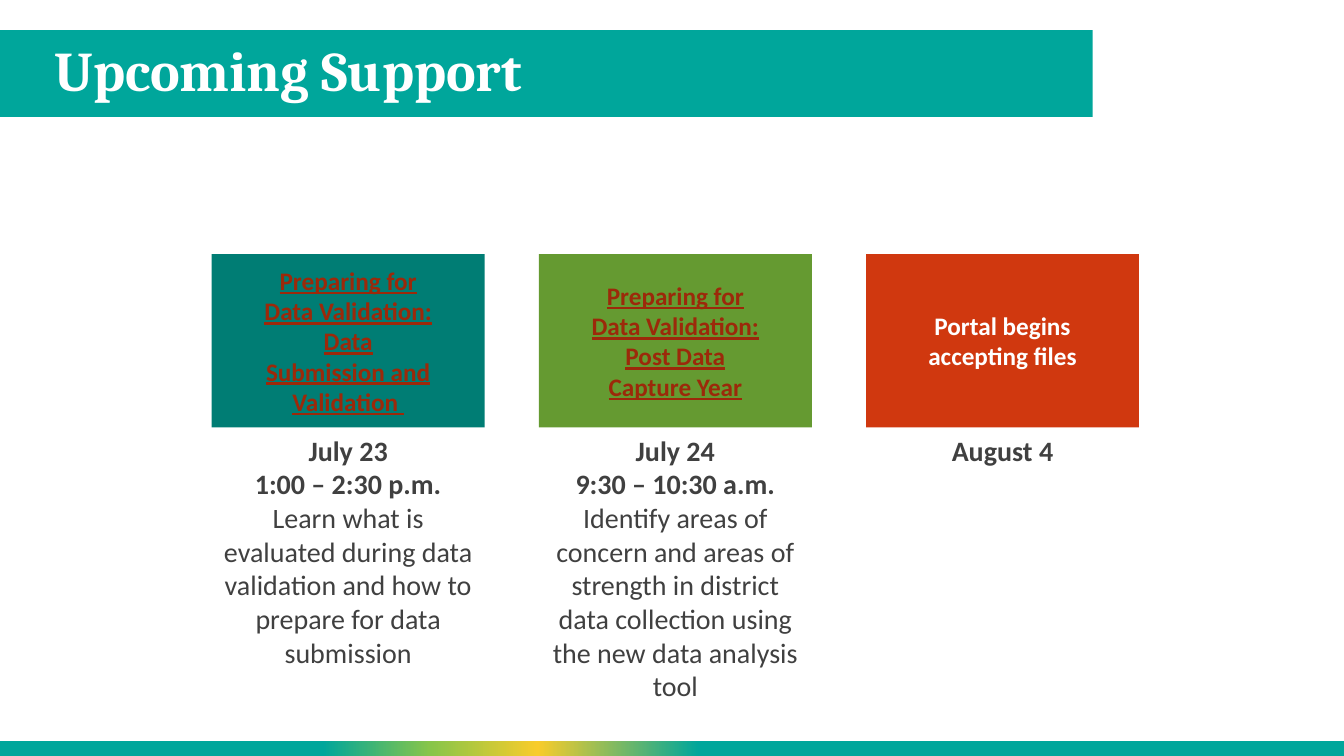
"""Build the Upcoming Support slide with three event columns."""
from dataclasses import dataclass

from lxml import etree
from pptx import Presentation
from pptx import util as u
from pptx.dml.color import RGBColor
from pptx.enum import shapes, text
from pptx.oxml.ns import qn
from pptx.shapes.autoshape import Shape
from pptx.slide import Slide

COLORS = {
    "teal": "00A69B",
    "yellow": "F8CC2B",
    "lime": "87C54A",
    "dark_teal": "007D74",
    "green": "659A31",
    "red": "D0380F",
    "link": "9C290A",
    "body": "404040",
    "white": "FFFFFF",
}
FOOTER_STOPS = [(0, "teal"), (48, "teal"), (60, "yellow"),
                (68, "lime"), (76, "teal"), (100, "teal")]
FIRST_LEFT, COLUMN_PITCH, COLUMN_WIDTH = 151.2, 233.7, 195
CARD_TOP, CARD_HEIGHT, CARD_INSET = 181.5, 123.8, 36
DETAIL_TOP, DETAIL_HEIGHT = 306, 131.8


@dataclass(frozen=True)
class Event:
    """One column: a coloured card with its schedule and description."""
    heading: str
    fill: str
    schedule: tuple[str, ...]
    description: str = ""
    linked: bool = True


EVENTS = [
    Event("Preparing for Data Validation: Data Submission and Validation ",
          "dark_teal", ("July 23", "1:00 – 2:30 p.m."),
          "Learn what is evaluated during data validation and how to "
          "prepare for data submission"),
    Event("Preparing for Data Validation: Post Data Capture Year",
          "green", ("July 24", "9:30 – 10:30 a.m."),
          "Identify areas of concern and areas of strength in district "
          "data collection using the new data analysis tool"),
    Event("Portal begins accepting files", "red", ("August 4",), linked=False),
]


def rgb(name: str) -> RGBColor:
    """Return the named colour."""
    return RGBColor.from_string(COLORS[name])


def add_rectangle(slide: Slide, left: float, top: float, width: float,
                  height: float, fill: str) -> Shape:
    """Add a flat rectangle without outline or shadow."""
    shape = slide.shapes.add_shape(
        shapes.MSO_SHAPE.RECTANGLE,
        u.Pt(left), u.Pt(top), u.Pt(width), u.Pt(height))
    shape.shadow.inherit = False
    shape.line.fill.background()
    shape.fill.solid()
    shape.fill.fore_color.rgb = rgb(fill)
    return shape


def style_paragraph(paragraph, size: float, color: str, bold: bool = True,
                    name: str = "Calibri",
                    alignment=text.PP_ALIGN.CENTER) -> None:
    """Set the alignment and font of a paragraph."""
    paragraph.alignment = alignment
    font = paragraph.font
    font.name, font.size, font.bold = name, u.Pt(size), bold
    font.color.rgb = rgb(color)


def add_footer(slide: Slide) -> None:
    """Add the gradient strip along the bottom edge."""
    footer = add_rectangle(slide, 0, 529.2, 960, 10.8, "teal")
    footer.fill.gradient()
    footer.fill.gradient_angle = 180
    stop_list = next(footer.element.iter(qn("a:gsLst")))
    for stop in list(stop_list):
        stop_list.remove(stop)
    for percent, color in FOOTER_STOPS:
        stop = etree.SubElement(stop_list, qn("a:gs"), pos=str(percent * 1000))
        etree.SubElement(stop, qn("a:srgbClr"), val=COLORS[color])


def format_title(slide: Slide) -> None:
    """Place the title in front of its banner and format it."""
    title = slide.shapes.title
    slide.shapes.element.append(title.element)
    title.left, title.top = u.Pt(31.7), u.Pt(21.6)
    title.width, title.height = u.Pt(749.5), u.Pt(61.9)
    frame = title.text_frame
    frame.text = "Upcoming Support"
    frame.auto_size = text.MSO_AUTO_SIZE.NONE
    frame.vertical_anchor = text.MSO_ANCHOR.MIDDLE
    paragraph = frame.paragraphs[0]
    paragraph.line_spacing = 0.9
    style_paragraph(paragraph, 40, "white", name="Cambria",
                    alignment=text.PP_ALIGN.LEFT)


def add_card(slide: Slide, event: Event, left: float) -> None:
    """Add the coloured heading card of an event."""
    card = add_rectangle(slide, left, CARD_TOP, COLUMN_WIDTH, CARD_HEIGHT,
                         event.fill)
    frame = card.text_frame
    frame.word_wrap = True
    frame.vertical_anchor = text.MSO_ANCHOR.MIDDLE
    frame.margin_left = frame.margin_right = u.Pt(CARD_INSET)
    frame.margin_top = frame.margin_bottom = u.Pt(CARD_INSET)
    frame.text = event.heading
    paragraph = frame.paragraphs[0]
    style_paragraph(paragraph, 18, "link" if event.linked else "white")
    paragraph.font.underline = event.linked
    paragraph.runs[0].font.underline = event.linked


def add_details(slide: Slide, event: Event, left: float) -> None:
    """Add the schedule and description under a card."""
    box = slide.shapes.add_textbox(u.Pt(left), u.Pt(DETAIL_TOP),
                                   u.Pt(COLUMN_WIDTH), u.Pt(DETAIL_HEIGHT))
    frame = box.text_frame
    frame.word_wrap = True
    lines = [(line, True) for line in event.schedule]
    if event.description:
        lines.append((event.description, False))
    frame.text = "\n".join(line for line, _ in lines)
    for paragraph, (_, bold) in zip(frame.paragraphs, lines):
        style_paragraph(paragraph, 20, "body", bold)


def main() -> None:
    """Build and save the presentation."""
    presentation = Presentation()
    presentation.slide_width, presentation.slide_height = u.Pt(960), u.Pt(540)
    slide = presentation.slides.add_slide(presentation.slide_layouts[5])
    add_rectangle(slide, 0, 21.6, 780.5, 61.9, "teal")
    add_footer(slide)
    format_title(slide)
    for index, event in enumerate(EVENTS):
        left = FIRST_LEFT + index * COLUMN_PITCH
        add_details(slide, event, left)
        add_card(slide, event, left)
    presentation.save("out.pptx")


if __name__ == "__main__":
    main()
